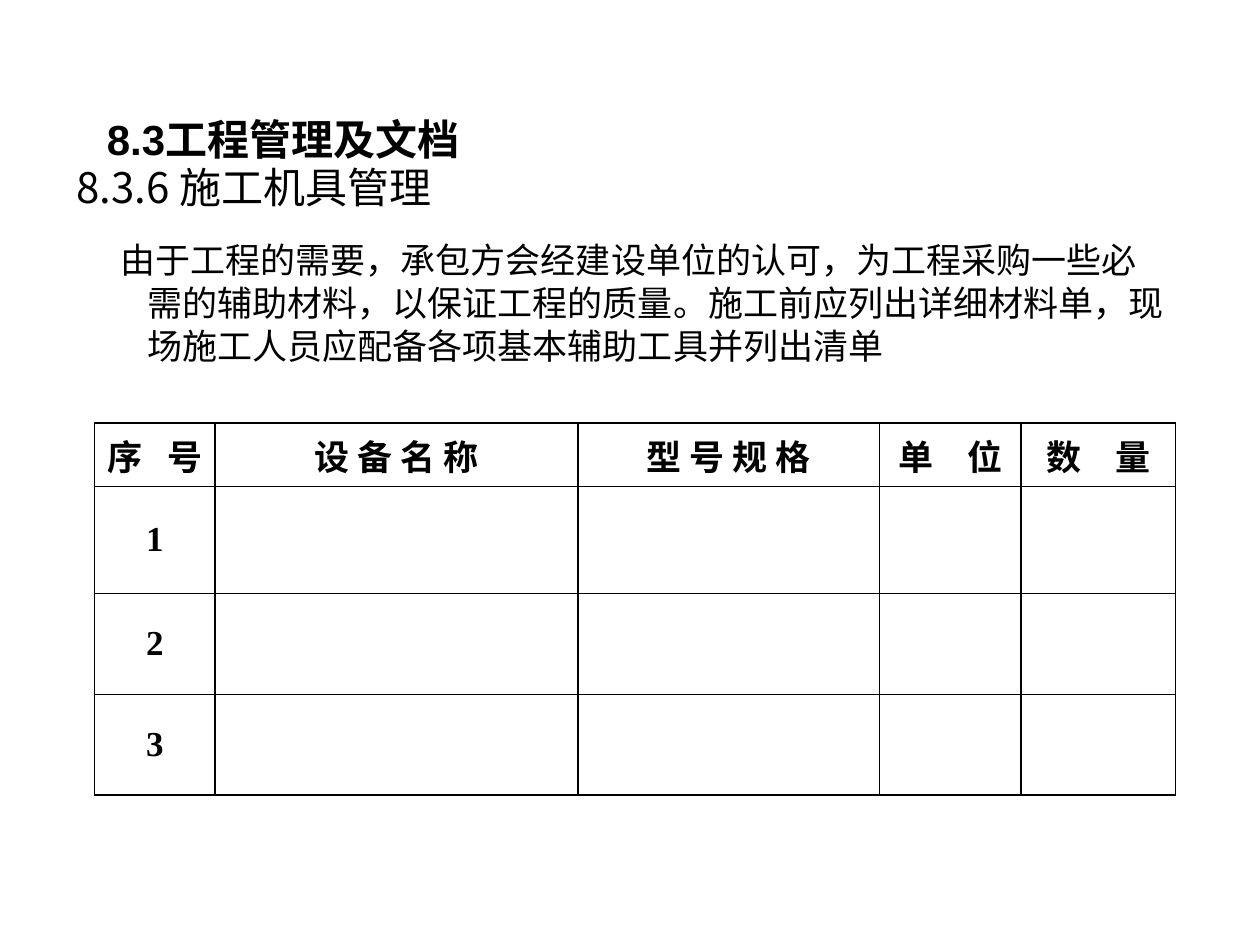
from dataclasses import dataclass

from lxml import etree
from pptx import Presentation
from pptx.dml.color import RGBColor
from pptx.enum.text import MSO_ANCHOR, PP_ALIGN
from pptx.oxml.ns import qn
from pptx.util import Pt

CENTER = PP_ALIGN.CENTER
LEFT = PP_ALIGN.LEFT
MIDDLE = MSO_ANCHOR.MIDDLE
TOP = MSO_ANCHOR.TOP

TITLE = "8.3工程管理及文档"
HEADING = "8.3.6 施工机具管理"
BODY = (
    "由于工程的需要，承包方会经建设单位的认可，为工程采购一些必需的辅助材料，"
    "以保证工程的质量。施工前应列出详细材料单，现场施工人员应配备各项基本辅助工具并列出清单"
)
COLUMNS = [
    ("序 号", 69, 10),
    ("设 备 名 称", 207.3, 0),
    ("型 号 规 格", 172.2, 0),
    ("单 位", 81, 15),
    ("数 量", 88.5, 15),
]
HEADER_HEIGHT = 36.3
ROWS = [("1", 61.2), ("2", 57.6), ("3", 57.6)]


@dataclass(frozen=True)
class Theme:
    ink: RGBColor = RGBColor(0, 0, 0)
    title_font: str = "Arial"
    body_font: str = "Noto Sans CJK SC"
    table_font: str = "Times New Roman"
    large: float = 24
    normal: float = 20
    line: float = 1
    edge_line: float = 0.75


THEME = Theme()


def add_run(paragraph, text, font_name, size, bold=False, spacing=0):
    run = paragraph.add_run()
    run.text = text
    run.font.name = font_name
    run.font.size = Pt(size)
    run.font.bold = bold
    run.font.color.rgb = THEME.ink
    properties = run._r.get_or_add_rPr()
    etree.SubElement(properties, qn("a:ea"), typeface=THEME.body_font)
    if spacing:
        properties.set("spc", str(spacing * 100))


def add_text_box(slide, left, top, width, height, anchor):
    shape = slide.shapes.add_textbox(Pt(left), Pt(top), Pt(width), Pt(height))
    frame = shape.text_frame
    frame.word_wrap = True
    frame.vertical_anchor = anchor
    return frame


def set_indent(paragraph, left, first_line):
    properties = paragraph._p.get_or_add_pPr()
    properties.set("marL", str(Pt(left)))
    properties.set("indent", str(Pt(first_line)))


def add_borders(cell, widths):
    properties = cell._tc.get_or_add_tcPr()
    for side, width in widths.items():
        line = etree.SubElement(properties, qn(f"a:ln{side}"), w=str(Pt(width)))
        fill = etree.SubElement(line, qn("a:solidFill"))
        etree.SubElement(fill, qn("a:srgbClr"), val=str(THEME.ink))


def write_cell(cell, text, gap=0):
    paragraph = cell.text_frame.paragraphs[0]
    paragraph.alignment = CENTER
    for index, word in enumerate(text.split(" ")):
        if index:
            add_run(paragraph, " ", THEME.table_font, THEME.normal, True, gap)
        add_run(paragraph, word, THEME.table_font, THEME.normal, True)


def add_equipment_table(slide):
    heights = [HEADER_HEIGHT] + [height for _, height in ROWS]
    widths = [width for _, width, _ in COLUMNS]
    table = slide.shapes.add_table(
        len(heights), len(widths), Pt(54), Pt(241.7), Pt(sum(widths)), Pt(sum(heights))
    ).table
    table.first_row = False
    table.horz_banding = False
    for column, width in zip(table.columns, widths):
        column.width = Pt(width)
    for row, height in zip(table.rows, heights):
        row.height = Pt(height)
        for index, cell in enumerate(row.cells):
            cell.vertical_anchor = MIDDLE
            cell.margin_left = cell.margin_right = Pt(3.6)
            add_borders(cell, {
                "L": THEME.line if index else THEME.edge_line,
                "R": THEME.line if index < len(widths) - 1 else THEME.edge_line,
                "T": THEME.line,
                "B": THEME.line,
            })
            cell.fill.background()
    for index, (label, _, gap) in enumerate(COLUMNS):
        write_cell(table.cell(0, index), label, gap)
    for index, (number, _) in enumerate(ROWS, 1):
        write_cell(table.cell(index, 0), number)


def main():
    presentation = Presentation()
    presentation.slide_width = Pt(720)
    presentation.slide_height = Pt(540)
    slide = presentation.slides.add_slide(presentation.slide_layouts[6])

    title = add_text_box(slide, 54, 65.5, 566.6, 28, MIDDLE).paragraphs[0]
    add_run(title, TITLE, THEME.title_font, THEME.large, True)

    content = add_text_box(slide, 36.7, 88.6, 637.2, 342.7, TOP)
    heading = content.paragraphs[0]
    set_indent(heading, 40.3, -40.3)
    add_run(heading, HEADING, THEME.body_font, THEME.large)

    body = content.add_paragraph()
    body.alignment = LEFT
    body.space_before = Pt(14.5)
    body.line_spacing = Pt(24.6)
    set_indent(body, 40.3, -15.4)
    add_run(body, BODY, THEME.body_font, THEME.normal)

    add_equipment_table(slide)
    presentation.save("out.pptx")


if __name__ == "__main__":
    main()
